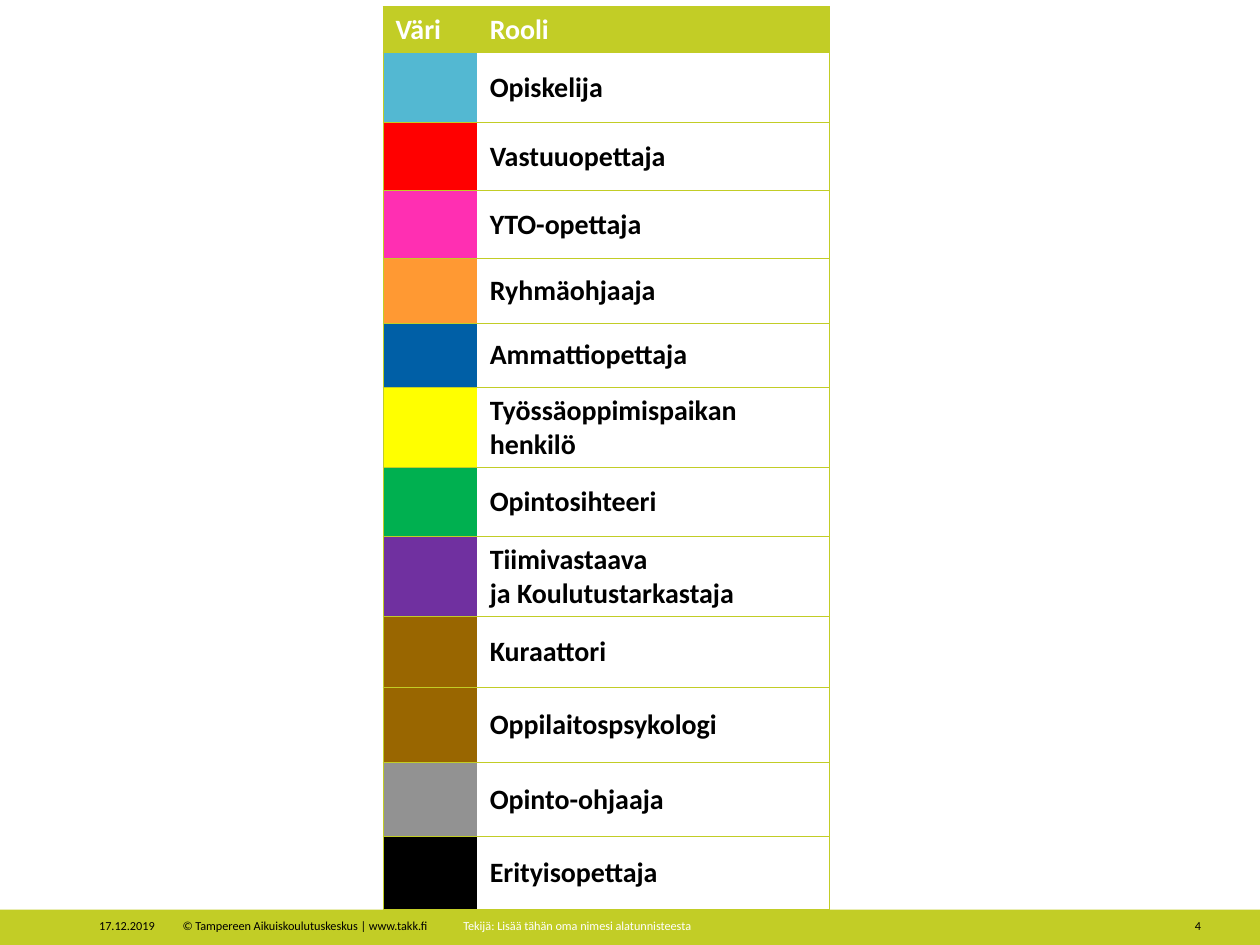
import copy

import pptx
import pptx.dml.color
import pptx.enum.shapes
import pptx.enum.text
import pptx.oxml
import pptx.oxml.ns
import pptx.util

Cm = pptx.util.Cm
Pt = pptx.util.Pt
RGB = pptx.dml.color.RGBColor.from_string
ALIGN = pptx.enum.text.PP_ALIGN
MIDDLE = pptx.enum.text.MSO_ANCHOR.MIDDLE

THEME = {"font": "Calibri", "lime": "C2CD26", "ink": "000000",
         "paper": "FFFFFF", "body": 16, "small": 7, "line": 0.5}

HEAD = ("Väri", "Rooli")
HEAD_HIGH = 0.81
# colour, role, row height in cm
ROLES = [
    ("53B8D2", "Opiskelija", 1.41),
    ("FF0000", "Vastuuopettaja", 1.37),
    ("FF2FB2", "YTO-opettaja", 1.37),
    ("FF9933", "Ryhmäohjaaja", 1.3),
    ("005FA6", "Ammattiopettaja", 1.3),
    ("FFFF00", "Työssäoppimispaikan henkilö", 1.5),
    ("00B050", "Opintosihteeri", 1.4),
    ("7030A0", "Tiimivastaava\vja Koulutustarkastaja", 1.42),
    ("996600", "Kuraattori", 1.42),
    ("996600", "Oppilaitospsykologi", 1.52),
    ("929292", "Opinto-ohjaaja", 1.5),
    ("000000", "Erityisopettaja", 1.47),
]
COLS = (1.9, 7.09)
TABLE_AT = (7.72, 0.13)

# text, left, width, colour, alignment, wrap
FOOT = [
    ("© Tampereen Aikuiskoulutuskeskus | www.takk.fi", 3.43, 5.64, "ink", ALIGN.LEFT, False),
    ("17.12.2019", 1.75, 1.7, "ink", ALIGN.LEFT, True),
    ("Tekijä: Lisää tähän oma nimesi alatunnisteesta", 9.09, 13.26, "paper", ALIGN.LEFT, True),
    ("4", 22.66, 1.8, "ink", ALIGN.RIGHT, True),
]
BAR_TOP, BAR_HIGH = 18.34, 0.71
FOOT_TOP, FOOT_HIGH = 18.39, 0.54
NO_STYLE = "{2D5ABB26-0587-4C30-8999-92F81FD0307C}"


def style(para, size, color, bold=False):
    looks = {"name": THEME["font"], "size": Pt(size), "bold": bold}
    for run in para.runs:
        for key, value in looks.items():
            setattr(run.font, key, value)
        run.font.color.rgb = RGB(color)
    # A line break carries its own text size.
    for br in para._p.findall(pptx.oxml.ns.qn("a:br")):
        br.append(copy.deepcopy(para.runs[0]._r.rPr))


def edge(cell, sides):
    """Line the given sides of a cell; the lines must precede its fill."""
    props = cell._tc.get_or_add_tcPr()
    for spot, side in enumerate("LRTB"):
        if side in sides:
            width, fill = Pt(THEME["line"]), f'<a:solidFill><a:srgbClr val="{THEME["lime"]}"/></a:solidFill>'
        else:
            width, fill = 0, "<a:noFill/>"
        line = pptx.oxml.parse_xml(
            f'<a:ln{side} {pptx.oxml.ns.nsdecls("a")} w="{width}">{fill}</a:ln{side}>')
        props.insert(spot, line)


def paint(cell, text, fill, color):
    cell.fill.solid()
    cell.fill.fore_color.rgb = RGB(fill)
    cell.vertical_anchor = MIDDLE
    if text:
        cell.text_frame.text = text
        style(cell.text_frame.paragraphs[0], THEME["body"], color, True)


def add_roles(slide):
    lime, ink, paper = THEME["lime"], THEME["ink"], THEME["paper"]
    rows = [[(text, lime, paper) for text in HEAD]]
    rows += [[("", color, ink), (role, paper, ink)] for color, role, _ in ROLES]
    highs = [HEAD_HIGH] + [high for _, _, high in ROLES]
    frame = slide.shapes.add_table(len(rows), len(COLS), *map(Cm, TABLE_AT),
                                   Cm(sum(COLS)), Cm(sum(highs)))
    table = frame.table
    table.first_row = True
    table.horz_banding = False
    table._tbl.tblPr.find(pptx.oxml.ns.qn("a:tableStyleId")).text = NO_STYLE
    for col, wide in zip(table.columns, COLS):
        col.width = Cm(wide)
    for row, high, cells in zip(table.rows, highs, rows):
        row.height = Cm(high)
        for cell, look, side in zip(row.cells, cells, "LR"):
            paint(cell, *look)
            edge(cell, side + "TB")


def add_foot(slide, wide):
    bar = slide.shapes.add_shape(pptx.enum.shapes.MSO_SHAPE.RECTANGLE,
                                 0, Cm(BAR_TOP), wide, Cm(BAR_HIGH))
    bar.shadow.inherit = False
    bar.fill.solid()
    bar.fill.fore_color.rgb = RGB(THEME["lime"])
    bar.line.fill.background()
    for text, left, width, color, align, wrap in FOOT:
        box = slide.shapes.add_textbox(Cm(left), Cm(FOOT_TOP), Cm(width), Cm(FOOT_HIGH))
        frame = box.text_frame
        frame.word_wrap = wrap
        frame.vertical_anchor = MIDDLE
        frame.text = text
        para = frame.paragraphs[0]
        para.alignment = align
        style(para, THEME["small"], THEME[color])


def main():
    deck = pptx.Presentation()
    deck.slide_width, deck.slide_height = Cm(25.4), Cm(19.05)
    slide = deck.slides.add_slide(deck.slide_layouts[6])
    add_foot(slide, deck.slide_width)
    add_roles(slide)
    deck.save("out.pptx")


if __name__ == "__main__":
    main()
